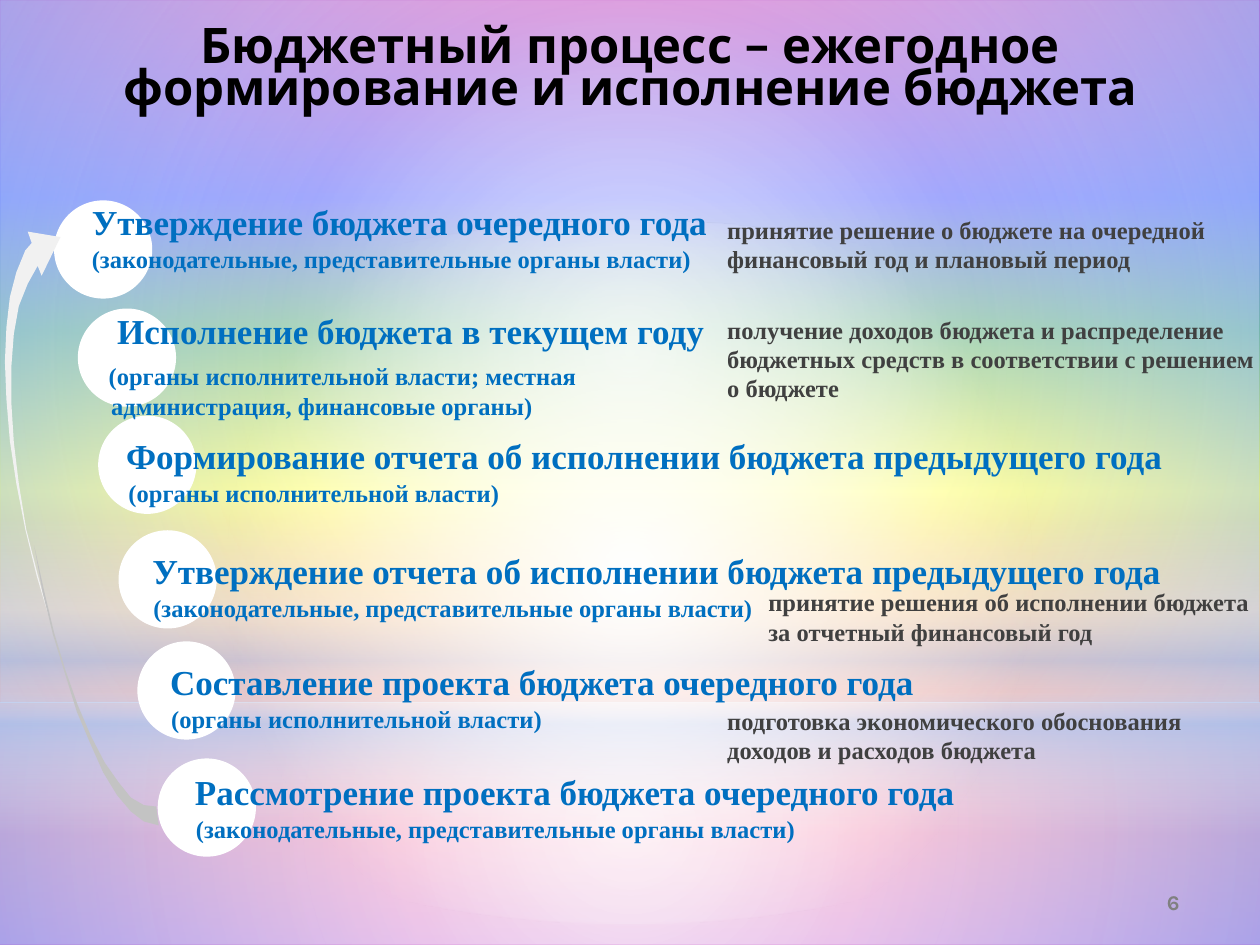
from typing import NamedTuple

from lxml import etree
from pptx import Presentation
from pptx.dml.color import RGBColor
from pptx.enum import shapes, text
from pptx.oxml.ns import qn
from pptx.util import Cm, Pt

SERIF, SANS = "Times New Roman", "Karla"
BLUE, GREY, WHITE, PALE = "006FC0", "404040", "FFFFFF", "ACCBF9"
LAW = "(законодательные, представительные органы власти)"
EXEC = "(органы исполнительной власти)"
DISC = 1.98


class Stage(NamedTuple):
    x: float  # disc position, cm
    y: float
    head: str
    dent: float  # heading indent, cm
    gap: float  # space above the heading, pt
    subs: tuple  # (text, indent in cm, space above in pt)


class Note(NamedTuple):
    box: tuple
    lines: tuple


class Glow(NamedTuple):
    kind: int
    box: tuple
    stops: tuple  # (position %, colour, opacity %)
    round: bool = True


STAGES = [
    Stage(1.09, 4.04, "Утверждение бюджета очередного года", 0.76, 0,
          ((LAW, 0.76, 0),)),
    Stage(1.57, 6.22, "Исполнение бюджета в текущем году", 1.27, 20.8,
          (("(органы исполнительной власти; местная", 1.1, 4.6),
           ("администрация, финансовые органы)", 1.15, 0))),
    Stage(1.98, 8.38, "Формирование отчета об исполнении бюджета предыдущего года",
          1.45, 7.8, ((EXEC, 1.5, 0),)),
    Stage(2.39, 10.69, "Утверждение отчета об исполнении бюджета предыдущего года",
          1.98, 24.2, ((LAW, 2, 0),)),
    Stage(2.77, 12.93, "Составление проекта бюджета очередного года", 2.34, 21.9,
          ((EXEC, 2.36, 0),)),
    Stage(3.18, 15.29, "Рассмотрение проекта бюджета очередного года", 2.84, 21.4,
          ((LAW, 2.86, 0),)),
]
NOTES = [
    Note((14.66, 4.22, 10.59, 1.4),
         ("принятие решение о бюджете на очередной финансовый год и плановый период",)),
    Note((14.66, 6.53, 10.67, 1.4),
         ("получение доходов бюджета и распределение бюджетных средств "
          "в соответствии с решением", "о бюджете")),
    Note((15.49, 11.73, 9.8, 1.4),
         ("принятие решения об исполнении бюджета за отчетный финансовый год",)),
    Note((14.66, 13.92, 10.85, 1.8),
         ("подготовка экономического обоснования доходов и расходов бюджета",)),
]
RECT, OVAL = shapes.MSO_SHAPE.RECTANGLE, shapes.MSO_SHAPE.OVAL
RAINBOW = ((0, "A603AB", 100), (21, "0819FB", 100), (35, "1A8D48", 100),
           (52, "FFFF00", 100), (73, "EE3F17", 100), (88, "E81766", 100),
           (100, "A603AB", 100))
GLOWS = [
    Glow(RECT, (0, 14.17, 25.4, 4.88), ((0, WHITE, 91), (37, WHITE, 76), (100, PALE, 79))),
    Glow(RECT, (0, 0, 25.4, 14.17), ((0, WHITE, 89), (48, WHITE, 62), (100, PALE, 79))),
    Glow(RECT, (0, 10.46, 25.4, 6.35),
         ((0, WHITE, 0), (29, WHITE, 30), (45, PALE, 40), (55, WHITE, 26),
          (65, PALE, 60), (100, WHITE, 0)), False),
    Glow(OVAL, (0, 4.44, 25.4, 14.17), ((0, WHITE, 100), (56, WHITE, 0))),
]
# Arrow outlines in tenths of a millimetre
HEAD = [(56, 467), (64, 490), (51, 505), (33, 549), (20, 599), (13, 660), (10, 729),
        (13, 805), (20, 889), (33, 975), (51, 1067), (74, 1161), (102, 1255),
        (76, 1158), (53, 1067), (38, 975), (28, 892), (23, 813), (23, 739),
        (28, 673), (38, 617), (56, 572), (76, 536), (84, 556), (122, 478)]
TAIL = [(69, 1100), (86, 1194), (107, 1280), (132, 1361), (155, 1435), (183, 1501),
        (208, 1557), (236, 1603), (264, 1636), (290, 1656), (320, 1664), (315, 1626),
        (290, 1623), (264, 1608), (239, 1577), (211, 1537), (183, 1483), (157, 1422),
        (132, 1351), (109, 1275), (89, 1191)]


def rgb(code: str) -> RGBColor:
    return RGBColor.from_string(code)


def node(top, tag: str, **attrs):
    return etree.SubElement(top, qn(tag), {k: str(v) for k, v in attrs.items()})


def blend(root, fill, stops: tuple, ring: bool) -> None:
    """Fill with a gradient: rings from the centre, or bands from top to bottom."""
    fill.gradient()
    grad = next(root.iter(qn("a:gradFill")))
    for part in list(grad):
        grad.remove(part)
    rows = node(grad, "a:gsLst")
    for pos, code, alpha in stops:
        tint = node(node(rows, "a:gs", pos=pos * 1000), "a:srgbClr", val=code)
        if alpha < 100:
            node(tint, "a:alpha", val=alpha * 1000)
    if ring:
        way = node(grad, "a:path", path="circle")
        node(way, "a:fillToRect", l=50000, t=50000, r=50000, b=50000)
    else:
        node(grad, "a:lin", ang=5400000, scaled=0)


def plain(shape, code: str) -> None:
    shape.shadow.inherit = False
    shape.fill.solid()
    shape.fill.fore_color.rgb = rgb(code)
    shape.line.fill.background()


def place(shape, box: tuple) -> None:
    shape.left, shape.top, shape.width, shape.height = map(Cm, box)


def setup(shape, inset: bool = False, mid: bool = False):
    frame = shape.text_frame
    frame.word_wrap = True
    frame.auto_size = text.MSO_AUTO_SIZE.NONE
    frame.vertical_anchor = text.MSO_ANCHOR.MIDDLE if mid else text.MSO_ANCHOR.TOP
    if not inset:
        frame.margin_left = frame.margin_right = 0
        frame.margin_top = frame.margin_bottom = 0
    return frame


def write(frame, words: str, size: float, code: str, font: str = SERIF,
          lead: float = 0, gap: float = 0, dent: float = 0, mid: bool = False):
    """Add a bold paragraph, using the empty first one when there is one."""
    par = frame.paragraphs[0] if not frame.text else frame.add_paragraph()
    par.alignment = text.PP_ALIGN.CENTER if mid else text.PP_ALIGN.LEFT
    par.space_before = Pt(gap)
    if lead:
        par.line_spacing = Pt(lead)
    props = par._p.get_or_add_pPr()
    props.set("marL", str(Cm(dent)))
    props.set("indent", "0")
    node(props, "a:buNone")
    run = par.add_run()
    run.text = words
    run.font.size, run.font.name, run.font.bold = Pt(size), font, True
    run.font.color.rgb = rgb(code)
    return run


def shade(run) -> None:
    """Give the letters a soft shadow."""
    props = run.font._element
    glow = etree.Element(qn("a:effectLst"))
    props.find(qn("a:solidFill")).addnext(glow)
    drop = node(glow, "a:outerShdw", blurRad=38100, dist=38100, dir=2700000, algn="tl")
    node(node(drop, "a:srgbClr", val="000000"), "a:alpha", val=43000)


def outline(slide, points: list, code: str) -> None:
    pen = slide.shapes.build_freeform(*points[0], scale=Cm(0.01))
    pen.add_line_segments(points[1:], close=True)
    plain(pen.convert_to_shape(), code)


def main() -> None:
    deck = Presentation()
    deck.slide_width, deck.slide_height = Cm(25.4), Cm(19.05)
    slide = deck.slides.add_slide(deck.slide_layouts[1])
    title, body = slide.placeholders
    blend(slide.element, slide.background.fill, RAINBOW, False)

    for glow in GLOWS:
        shape = slide.shapes.add_shape(glow.kind, *map(Cm, glow.box))
        plain(shape, WHITE)
        blend(shape.element, shape.fill, glow.stops, glow.round)

    place(body, (1.09, 4.04, 23.62, 13.69))
    frame = setup(body)
    for step in STAGES:
        disc = slide.shapes.add_shape(OVAL, *map(Cm, (step.x, step.y, DISC, DISC)))
        plain(disc, WHITE)
        write(frame, step.head, 20, BLUE, lead=24, gap=step.gap, dent=step.dent)
        for words, dent, gap in step.subs:
            write(frame, words, 14, BLUE, lead=17.5, gap=gap, dent=dent)
    tree = body.element.getparent()
    tree.append(body.element)

    outline(slide, HEAD, "F1F1F1")
    outline(slide, TAIL, "C3C3C3")

    for note in NOTES:
        frame = setup(slide.shapes.add_textbox(*map(Cm, note.box)), mid=True)
        for line in note.lines:
            write(frame, line, 14, GREY)

    place(title, (0, 0.51, 25.4, 2.59))
    shade(write(setup(title, inset=True),
                "Бюджетный процесс – ежегодное формирование и исполнение бюджета",
                28, "000000", SANS, lead=24, mid=True))
    tree.append(title.element)

    page = slide.shapes.add_textbox(*map(Cm, (21.11, 17.68, 5.08, 1.02)))
    write(setup(page, inset=True, mid=True), "6", 12, "808080", SANS, mid=True)
    deck.save("out.pptx")


if __name__ == "__main__":
    main()
